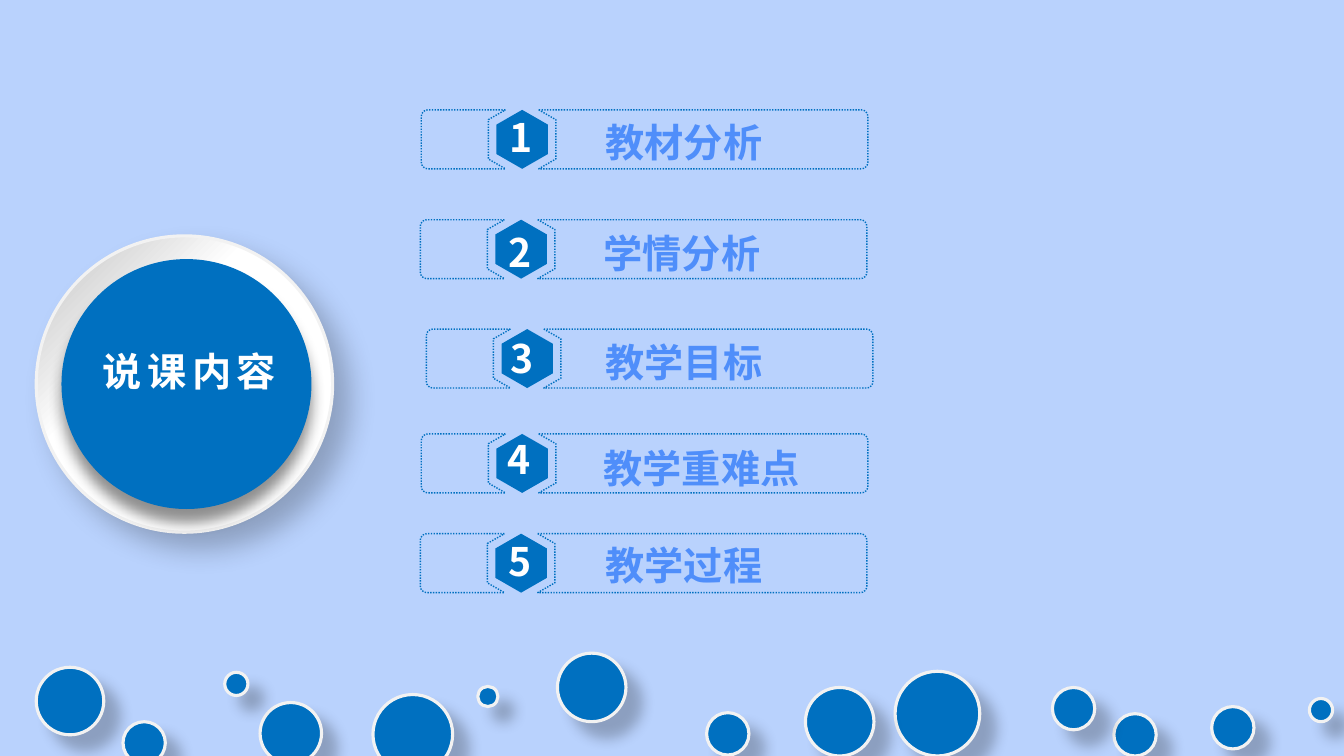
from dataclasses import dataclass
from math import cos, pi, sin

from lxml.etree import SubElement
from pptx import Presentation
from pptx.dml.color import RGBColor
from pptx.enum.dml import MSO_LINE
from pptx.enum.shapes import MSO_SHAPE
from pptx.enum.text import MSO_AUTO_SIZE
from pptx.oxml import parse_xml
from pptx.oxml.ns import qn
from pptx.util import Emu, Inches, Pt

BLUE, WHITE, RIM, LABEL, SKY = "0070C0", "FFFFFF", "F2F2F2", "4F8EFA", "B9D2FD"
CJK = "Noto Sans CJK SC"
NS = "http://schemas.openxmlformats.org/drawingml/2006/main"
CELL = Inches(0.1)  # the slide is a grid of 133.3 columns by 75 rows
BAR_W, BAR_H, AXIS = 44.3, 5.85, 10  # AXIS: columns from bar's left to hexagon centre
TEXT_H = 5.7


@dataclass
class Bubble:
    col: float
    row: float
    size: float


@dataclass
class Item:
    number: str
    label: str
    col: float
    row: float
    number_at: tuple[float, float]
    label_at: tuple[float, float]


BUBBLES = [
    Bubble(25.8, 69.7, 6.1), Bubble(55.3, 64.8, 6.8), Bubble(88.8, 66.6, 8.4),
    Bubble(70.1, 70.7, 4.2), Bubble(3.6, 66.2, 6.7), Bubble(37, 68.9, 7.9),
    Bubble(79.9, 68.2, 6.8), Bubble(22.3, 66.7, 2.3), Bubble(12.2, 71.6, 4.2),
    Bubble(110.5, 70.8, 4.2), Bubble(47.4, 68.1, 2), Bubble(129.9, 69.3, 2.3),
    Bubble(104.4, 68.2, 4.2), Bubble(120.2, 70.1, 4.2),
]
ITEMS = [
    Item("1", "教材分析", 41.8, 10.9, (49.6, 10.8), (59.1, 11.2)),
    Item("2", "学情分析", 41.7, 21.8, (49.5, 22.2), (58.9, 22.3)),
    Item("3", "教学目标", 42.3, 32.65, (49.7, 32.7), (59.1, 33.1)),
    Item("4", "教学重难点", 41.8, 43.05, (49.4, 42.7), (58.9, 43.6)),
    Item("5", "教学过程", 41.7, 52.95, (49.5, 52.8), (59.1, 53.2)),
]


def cells(n: float) -> Emu:
    return Emu(round(n * CELL))


def rgb(value: str) -> RGBColor:
    return RGBColor.from_string(value)


def effects(alpha: int, blur: float, dist: float, angle: int):
    return parse_xml(
        f'<a:effectLst xmlns:a="{NS}"><a:outerShdw blurRad="{Pt(blur)}" dist="{Pt(dist)}" '
        f'dir="{angle * 60000}" algn="ctr" rotWithShape="0"><a:srgbClr val="000000">'
        f'<a:alpha val="{alpha * 1000}"/></a:srgbClr></a:outerShdw></a:effectLst>')


def paint(sp, fill: str | None = None, line: str | None = None, width: float = 1) -> None:
    sp.shadow.inherit = False
    if fill:
        sp.fill.solid()
        sp.fill.fore_color.rgb = rgb(fill)
    else:
        sp.fill.background()
    if line:
        sp.line.color.rgb = rgb(line)
        sp.line.width = Pt(width)
    else:
        sp.line.fill.background()


def add_circle(shapes, b: Bubble, line: str | None = RIM, shadow=(23, 10, 15, 45)):
    sp = shapes.add_shape(MSO_SHAPE.OVAL, *map(cells, (b.col, b.row, b.size, b.size)))
    paint(sp, BLUE, line, 2.25)
    old = sp._element.spPr.find(qn("a:effectLst"))
    old.getparent().replace(old, effects(*shadow))
    return sp


def add_text(shapes, text: str, col: float, row: float, width: float, *, font: str = CJK,
             color: str = WHITE, wrap: bool = True, spacing: float = 0, shadow=None) -> None:
    sp = shapes.add_textbox(*map(cells, (col, row, width, TEXT_H)))
    tf = sp.text_frame
    tf.word_wrap = wrap
    tf.auto_size = MSO_AUTO_SIZE.SHAPE_TO_FIT_TEXT
    r = tf.paragraphs[0].add_run()
    r.text = text
    r.font.size, r.font.bold, r.font.name = Pt(28), True, font
    r.font.color.rgb = rgb(color)
    rpr = r.font._element
    SubElement(rpr, qn("a:ea")).set("typeface", CJK)
    if spacing:
        rpr.set("spc", str(round(spacing * 100)))
    if shadow:
        rpr.find(qn("a:solidFill")).addnext(effects(*shadow))


def half_frame(side: int, reach: float) -> list[tuple[float, float]]:
    """Outline of one half of a bar, from the hexagon's axis out to its rounded end."""
    radius, mid = 0.65, BAR_H / 2
    arc = [(reach - radius + radius * sin(i * pi / 8), radius - radius * cos(i * pi / 8))
           for i in range(5)]
    end = arc + [(x, BAR_H - y) for x, y in reversed(arc)]
    notch = [(1.65, BAR_H), (3.35, mid + 1.95), (3.35, mid - 1.95)]
    return [(AXIS + side * x, y) for x, y in [(1.65, 0), *end, *notch]]


def add_outline(shapes, col: float, row: float, contours):
    points = [[(cells(col + x), cells(row + y)) for x, y in c] for c in contours]
    fb = shapes.build_freeform(*points[0][0])
    fb.add_line_segments(points[0][1:], close=True)
    for contour in points[1:]:
        fb.move_to(*contour[0])
        fb.add_line_segments(contour[1:], close=True)
    return fb.convert_to_shape()


def add_item(shapes, item: Item) -> None:
    group = shapes.add_group_shape().shapes
    halves = [half_frame(-1, AXIS), half_frame(1, BAR_W - AXIS)]
    frame = add_outline(group, item.col, item.row, halves)
    paint(frame, line=BLUE)
    frame.line.dash_style = MSO_LINE.ROUND_DOT
    hexagon = [(AXIS + x, y * BAR_H) for x, y in
               [(0, 0), (2.55, .25), (2.55, .75), (0, 1), (-2.55, .75), (-2.55, .25)]]
    paint(add_outline(group, item.col, item.row, [hexagon]), BLUE)
    add_text(group, item.number, *item.number_at, 7.7)
    add_text(shapes, item.label, *item.label_at, 23.5, color=LABEL)


def add_badge(shapes) -> None:
    plate = add_circle(shapes, Bubble(3.6, 23.4, 29.4), shadow=(23, 20, 15, 45))
    plate.fill.gradient()
    plate.fill.gradient_angle = 315
    for stop, (color, pos) in zip(plate.fill.gradient_stops, [("BFBFBF", 0), (WHITE, 0.37)]):
        stop.color.rgb, stop.position = rgb(color), pos
    add_circle(shapes, Bubble(6.1, 25.7, 24.8), line=None, shadow=(43, 10, 10, 90))
    add_text(shapes, "说课内容", 9.2, 34, 20, font="Arial", wrap=False, spacing=4,
             shadow=(43, 10, 10, 90))


def main() -> None:
    prs = Presentation()
    prs.slide_width, prs.slide_height = cells(133.33), cells(75)
    s = prs.slides.add_slide(prs.slide_layouts[6])
    s.background.fill.solid()
    s.background.fill.fore_color.rgb = rgb(SKY)
    for bubble in BUBBLES:
        add_circle(s.shapes, bubble)
    add_badge(s.shapes)
    for item in ITEMS:
        add_item(s.shapes, item)
    prs.save("out.pptx")


if __name__ == "__main__":
    main()
